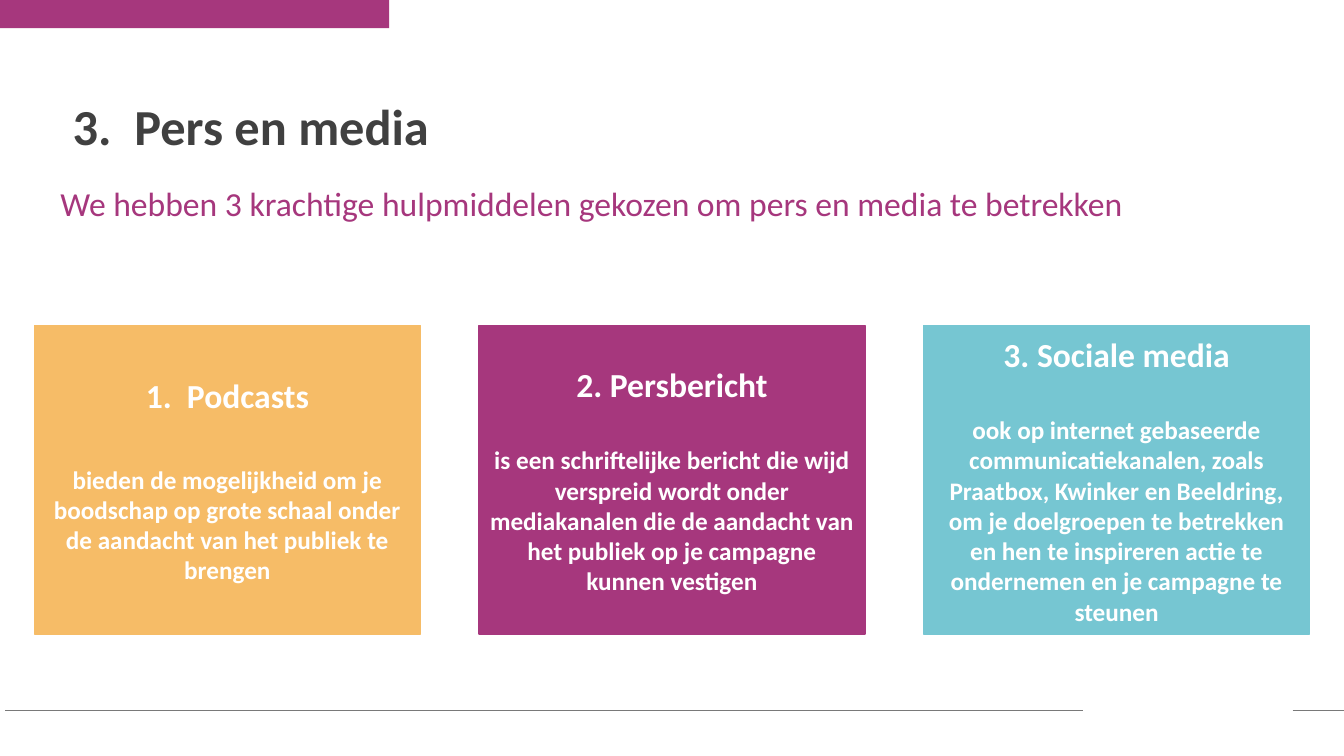
"""Build a slide with three coloured cards about press and media tools."""
from lxml import etree
from pptx import Presentation
from pptx.dml.color import RGBColor
from pptx.enum.shapes import MSO_CONNECTOR, MSO_SHAPE
from pptx.enum.text import MSO_ANCHOR, MSO_AUTO_SIZE, PP_ALIGN
from pptx.oxml.ns import qn
from pptx.util import Inches, Pt

RECTANGLE = MSO_SHAPE.RECTANGLE
STRAIGHT = MSO_CONNECTOR.STRAIGHT
TOP, MIDDLE = MSO_ANCHOR.TOP, MSO_ANCHOR.MIDDLE
LEFT, CENTER = PP_ALIGN.LEFT, PP_ALIGN.CENTER
NO_AUTOFIT = MSO_AUTO_SIZE.NONE

PURPLE = RGBColor(0xA6, 0x37, 0x7D)
ORANGE = RGBColor(0xF6, 0xBC, 0x67)
TEAL = RGBColor(0x76, 0xC6, 0xD2)
WHITE = RGBColor(0xFF, 0xFF, 0xFF)
DARK = RGBColor(0x40, 0x40, 0x40)
GREY = RGBColor(0x79, 0x79, 0x79)

FONT = "Calibri"
TITLE = "3.  Pers en media"
SUBTITLE = "We hebben 3 krachtige hulpmiddelen gekozen om pers en media te betrekken"
CARDS = [
    ("1.  Podcasts",
     "bieden de mogelijkheid om je boodschap op grote schaal onder de aandacht "
     "van het publiek te brengen", ORANGE, 35),
    ("2. Persbericht",
     "is een schriftelijke bericht die wijd verspreid wordt onder mediakanalen "
     "die de aandacht van het publiek op je campagne kunnen vestigen", PURPLE, 29),
    ("3. Sociale media",
     "ook op internet gebaseerde communicatiekanalen, zoals Praatbox, Kwinker en "
     "Beeldring, om je doelgroepen te betrekken en hen te inspireren actie te "
     "ondernemen en je campagne te steunen", TEAL, 29),
]

SLIDE_WIDTH, SLIDE_HEIGHT = 13.33, 7.5
CARD_LEFT, CARD_TOP, CARD_WIDTH, CARD_HEIGHT = 0.34, 3.23, 3.83, 3.06
CARD_STEP = CARD_WIDTH + 0.58
RULE_Y = 7.05
RULE_SPANS = [(0.05, 10.74), (12.82, SLIDE_WIDTH)]


def style(para, size, color, bold, align):
    """Format one paragraph."""
    para.alignment = align
    para.font.name = FONT
    para.font.size = Pt(size)
    para.font.bold = bold
    para.font.color.rgb = color


def add_block(page, left, top, width, height, color):
    """Add a flat coloured rectangle."""
    block = page.shapes.add_shape(
        RECTANGLE, Inches(left), Inches(top), Inches(width), Inches(height))
    block.shadow.inherit = False
    block.fill.solid()
    block.fill.fore_color.rgb = color
    block.line.fill.background()
    return block


def add_rule(page, start, end):
    """Add a thin horizontal footer line."""
    rule = page.shapes.add_connector(
        STRAIGHT, Inches(start), Inches(RULE_Y), Inches(end), Inches(RULE_Y))
    rule.line.color.rgb = GREY
    rule.line.width = Pt(0.5)
    etree.SubElement(rule._element.spPr, qn("a:effectLst"))


def set_heading(box, left, top, width, height, text, size, color, bold):
    """Place a heading box and fill it with one line of text."""
    box.left, box.top = Inches(left), Inches(top)
    box.width, box.height = Inches(width), Inches(height)
    frame = box.text_frame
    frame.text = text
    frame.word_wrap = True
    frame.auto_size = NO_AUTOFIT
    frame.vertical_anchor = TOP
    para = frame.paragraphs[0]
    para.line_spacing = 0.9
    style(para, size, color, bold, LEFT)


def add_card(page, column, heading, body, color, gap):
    """Add one card with a heading and a description."""
    card = add_block(page, CARD_LEFT + column * CARD_STEP, CARD_TOP,
                     CARD_WIDTH, CARD_HEIGHT, color)
    card.line.color.rgb = color
    card.line.width = Pt(1)
    frame = card.text_frame
    frame.word_wrap = True
    frame.vertical_anchor = MIDDLE
    frame.text = heading
    style(frame.paragraphs[0], 24, WHITE, True, CENTER)
    para = frame.add_paragraph()
    para.text = body
    para.space_before = Pt(gap)
    style(para, 18, WHITE, True, CENTER)


def main():
    """Create and save the deck."""
    deck = Presentation()
    deck.slide_width, deck.slide_height = Inches(SLIDE_WIDTH), Inches(SLIDE_HEIGHT)
    page = deck.slides.add_slide(deck.slide_layouts.get_by_name("Title Only"))
    add_block(page, 0, 0, 3.86, 0.28, PURPLE)
    for start, end in RULE_SPANS:
        add_rule(page, start, end)
    set_heading(page.shapes.title, 0.62, 0.96, 5.74, 0.75, TITLE, 36, DARK, True)
    subtitle = page.shapes.add_textbox(0, 0, 0, 0)
    set_heading(subtitle, 0.5, 1.81, 11.15, 0.6, SUBTITLE, 24, PURPLE, False)
    for column, card in enumerate(CARDS):
        add_card(page, column, *card)
    deck.save("out.pptx")


if __name__ == "__main__":
    main()
